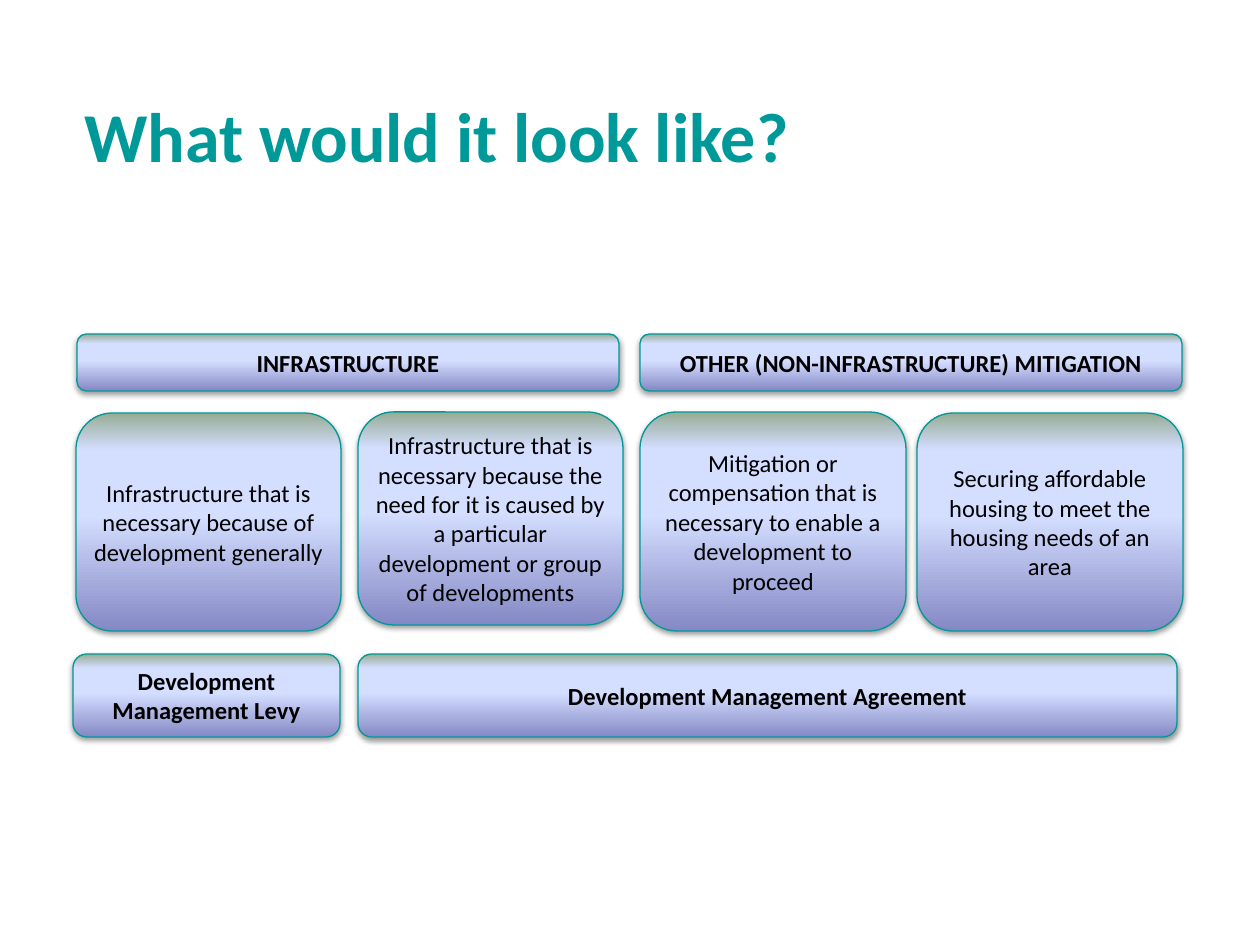
"""Build the slide that sorts development mitigation into levy and agreement."""
import copy

import lxml.etree
import pptx
import pptx.dml.color
import pptx.enum.shapes
import pptx.enum.text
import pptx.oxml.ns
import pptx.util

COLORS = {"teal": "009999", "black": "000000", "indigo": "8488C4", "pale": "D4DEFF", "sage": "96AB94"}
GRADIENT = [(0, "indigo"), (0.53, "pale"), (0.83, "pale"), (1, "sage")]
qn = pptx.oxml.ns.qn


def px(length):
    return pptx.util.Emu(round(length * 914400 / 126))


def write(frame, text, size, color, bold):
    frame.word_wrap = True
    frame.vertical_anchor = pptx.enum.text.MSO_ANCHOR.MIDDLE
    paragraph = frame.paragraphs[0]
    paragraph.text = text
    paragraph.font.name = "Calibri"
    paragraph.font.size = pptx.util.Pt(size)
    paragraph.font.bold = bold
    paragraph.font.color.rgb = pptx.dml.color.RGBColor.from_string(COLORS[color])
    return paragraph


deck = pptx.Presentation()
deck.slide_width, deck.slide_height = px(1260), px(945)
slide = deck.slides.add_slide(deck.slide_layouts[6])

title = slide.shapes.add_textbox(px(72), px(55), px(1071), px(158))
write(title.text_frame, "What would it look like?", 40, "teal", True)

panels = [
    (358, 654, 819, 83, True, "Development Management Agreement"),
    (73, 654, 267, 83, True, "Development Management Levy"),
    (76, 413, 265, 218, False, "Infrastructure that is necessary because of development generally"),
    (358, 412, 265, 213, False, "Infrastructure that is necessary because the need for it is caused by "
                                "a particular development or group of developments"),
    (640, 412, 266, 219, False, "Mitigation or compensation that is necessary to enable a development to proceed"),
    (917, 413, 266, 218, False, "Securing affordable housing to meet the housing needs of an area"),
    (77, 334, 542, 57, True, "INFRASTRUCTURE"),
    (640, 334, 542, 57, True, "OTHER (NON-INFRASTRUCTURE) MITIGATION"),
]

for left, top, width, height, bold, text in panels:
    panel = slide.shapes.add_shape(
        pptx.enum.shapes.MSO_SHAPE.ROUNDED_RECTANGLE, px(left), px(top), px(width), px(height))
    panel.line.color.rgb = pptx.dml.color.RGBColor.from_string(COLORS["teal"])
    panel.line.width = pptx.util.Pt(0.75)

    panel.fill.gradient()
    panel.fill.gradient_angle = 90
    stop_list = panel.element.spPr.find(".//" + qn("a:gsLst"))
    for stop in list(stop_list):
        stop_list.append(copy.deepcopy(stop))
    for stop, (position, color) in zip(panel.fill.gradient_stops, GRADIENT):
        stop.position = position
        stop.color.rgb = pptx.dml.color.RGBColor.from_string(COLORS[color])

    panel.shadow.inherit = False
    effects = panel.element.spPr.find(qn("a:effectLst"))
    shadow = lxml.etree.SubElement(effects, qn("a:outerShdw"), blurRad="40000", dist="20000",
                                   dir="5400000", rotWithShape="0")
    shade = lxml.etree.SubElement(shadow, qn("a:srgbClr"), val=COLORS["black"])
    lxml.etree.SubElement(shade, qn("a:alpha"), val="38000")

    frame = panel.text_frame
    frame.margin_left = frame.margin_right = px(5)
    frame.margin_top = frame.margin_bottom = 0
    label = write(frame, text, 14, "black", bold)
    label.alignment = pptx.enum.text.PP_ALIGN.CENTER

deck.save("out.pptx")
